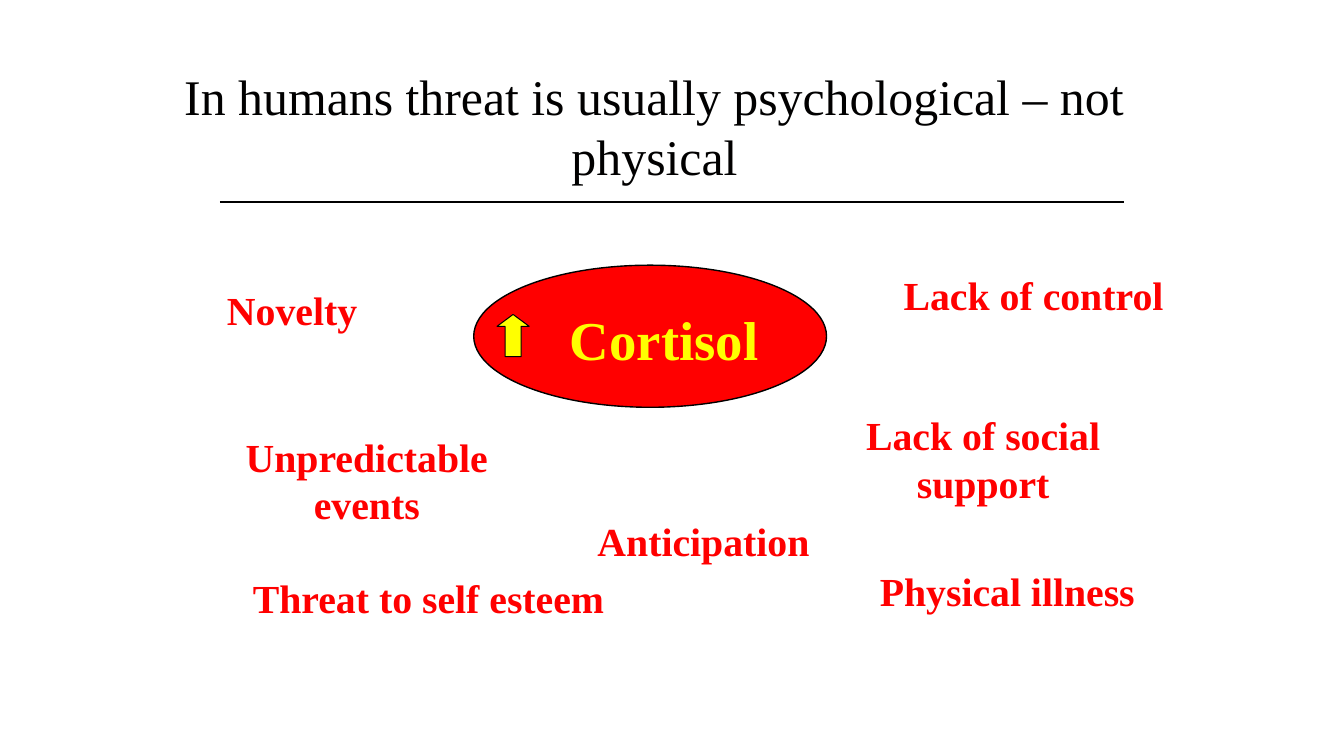
"""Build a slide on the psychological threats that raise cortisol in humans."""
from lxml import etree
from pptx import Presentation
from pptx.dml.color import RGBColor
from pptx.enum import shapes, text
from pptx.oxml.ns import qn
from pptx.util import Pt

COLORS = {"threat": "FF0000", "cortisol": "FFFF00", "title": "010000", "line": "000000"}


def add_label(wording, left, top, width, height, size, color, bold=True):
    label = slide.shapes.add_textbox(Pt(left), Pt(top), Pt(width), Pt(height))
    frame = label.text_frame
    frame.word_wrap = True
    frame.auto_size = text.MSO_AUTO_SIZE.SHAPE_TO_FIT_TEXT
    paragraph = frame.paragraphs[0]
    paragraph.alignment = text.PP_ALIGN.CENTER
    run = paragraph.add_run()
    run.text = wording
    run.font.name = "Times New Roman"
    run.font.size = Pt(size)
    run.font.bold = bold
    run.font.color.rgb = RGBColor.from_string(COLORS[color])


def add_outlined(kind, left, top, width, height, color, line_width):
    outlined = slide.shapes.add_shape(kind, Pt(left), Pt(top), Pt(width), Pt(height))
    outlined.shadow.inherit = False
    outlined.fill.solid()
    outlined.fill.fore_color.rgb = RGBColor.from_string(COLORS[color])
    outlined.line.color.rgb = RGBColor.from_string(COLORS["line"])
    outlined.line.width = Pt(line_width)
    return outlined


deck = Presentation()
deck.slide_width, deck.slide_height = Pt(960), Pt(540)
slide = deck.slides.add_slide(deck.slide_layouts[6])

add_label("In humans threat is usually psychological – not physical",
          120.2, 43.2, 694.8, 93.6, 35.6, "title", bold=False)
title_rule = slide.shapes.add_connector(
    shapes.MSO_CONNECTOR.STRAIGHT, Pt(157), Pt(144), Pt(803), Pt(144))
title_rule.line.color.rgb = RGBColor.from_string(COLORS["line"])
title_rule.line.width = Pt(1.5)
etree.SubElement(title_rule._element.spPr, qn("a:effectLst"))

add_outlined(shapes.MSO_SHAPE.OVAL, 338.4, 189.4, 252, 101.5, "threat", 1)
add_label("Cortisol", 383.8, 214.6, 181.4, 54.7, 39.1, "cortisol")
rise_arrow = add_outlined(shapes.MSO_SHAPE.UP_ARROW, 355, 224.6, 23, 30.2, "cortisol", 0.75)
rise_arrow.adjustments[1] = 0.37

threats = [
    ("Novelty", 120.2, 200.9, 177.1, 41.8),
    ("Unpredictable events", 139.7, 305.3, 244.8, 76.3),
    ("Threat to self esteem", 145.4, 406.1, 321.8, 41.8),
    ("Anticipation", 384.5, 365.8, 236.2, 41.8),
    ("Lack of control", 636.5, 190.1, 203.8, 41.8),
    ("Lack of social support", 587.5, 290.2, 229.7, 76.3),
    ("Physical illness", 599.8, 401, 239.8, 41.8),
]
for wording, left, top, width, height in threats:
    add_label(wording, left, top, width, height, 28.4, "threat")

deck.save("out.pptx")
